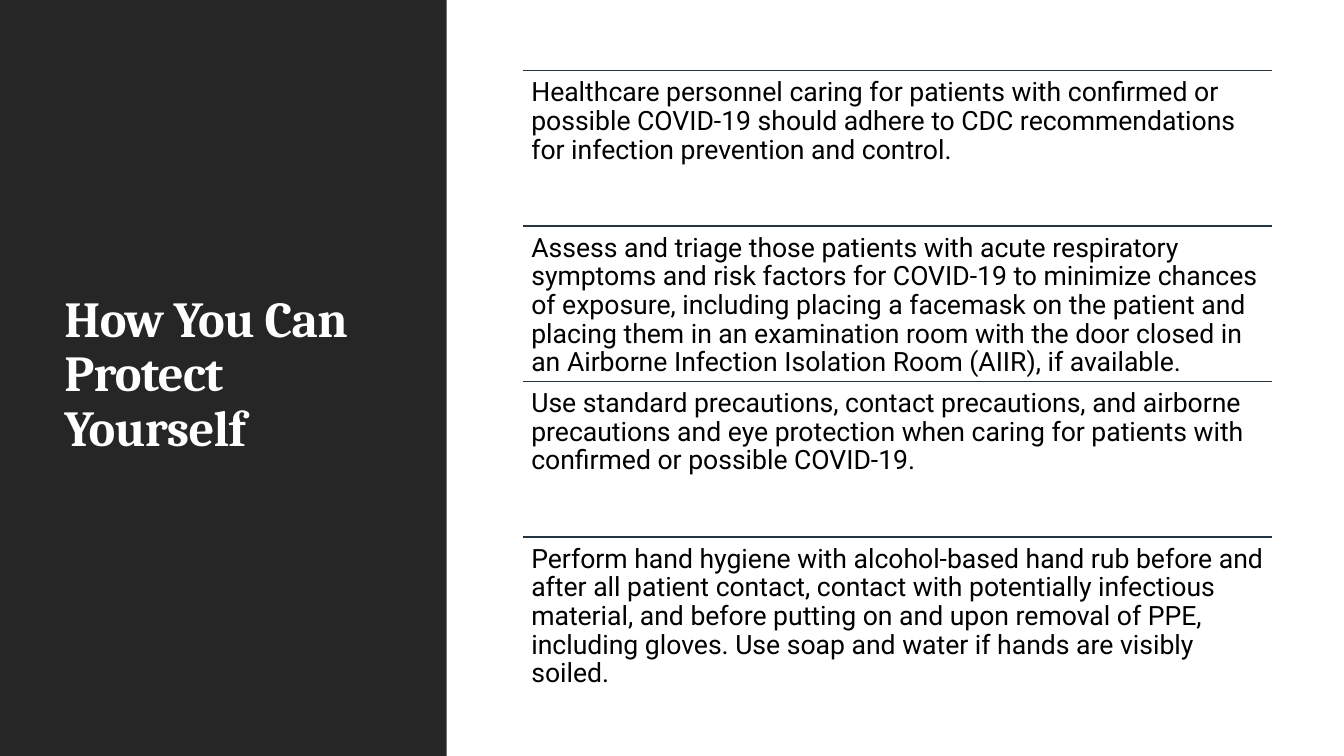
from dataclasses import dataclass

from lxml import etree
from pptx import Presentation
from pptx.dml.color import RGBColor
from pptx.enum.shapes import MSO_CONNECTOR, MSO_SHAPE
from pptx.enum.text import MSO_ANCHOR
from pptx.oxml.ns import qn
from pptx.util import Inches, Pt

STRAIGHT = MSO_CONNECTOR.STRAIGHT
RECTANGLE = MSO_SHAPE.RECTANGLE
TOP, MIDDLE = MSO_ANCHOR.TOP, MSO_ANCHOR.MIDDLE

TITLE = "How You Can Protect Yourself"
PRECAUTIONS = [
    "Healthcare personnel caring for patients with confirmed or possible COVID-19 "
    "should adhere to CDC recommendations for infection prevention and control.",
    "Assess and triage those patients with acute respiratory symptoms and risk factors "
    "for COVID-19 to minimize chances of exposure, including placing a facemask on the "
    "patient and placing them in an examination room with the door closed in an "
    "Airborne Infection Isolation Room (AIIR), if available.",
    "Use standard precautions, contact precautions, and airborne precautions and eye "
    "protection when caring for patients with confirmed or possible COVID-19.",
    "Perform hand hygiene with alcohol-based hand rub before and after all patient "
    "contact, contact with potentially infectious material, and before putting on and "
    "upon removal of PPE, including gloves. Use soap and water if hands are visibly soiled.",
]


@dataclass(frozen=True)
class Theme:
    panel: RGBColor = RGBColor(0x26, 0x26, 0x26)
    rule: RGBColor = RGBColor(0x24, 0x35, 0x41)
    title: RGBColor = RGBColor(0xFF, 0xFF, 0xFF)
    body: RGBColor = RGBColor(0, 0, 0)
    title_font: str = "Cambria"
    body_font: str = "Roboto"
    title_size: float = 36
    body_size: float = 19
    rule_width: float = 1.25


THEME = Theme()
SLIDE_WIDTH, SLIDE_HEIGHT = 13.33, 7.5
PANEL_WIDTH = 4.43
TITLE_BOX = (0.54, 0.57, 3.37, 6.31)
LIST_LEFT, LIST_TOP, LIST_WIDTH, LIST_HEIGHT = 5.19, 0.7, 7.43, 6.17


def add_text(slide, text, box, *, font, size, color, bold=False, anchor=TOP,
             inset_x=0.08, inset_y=0.08, tracking=0):
    """Add a wrapped text box; tracking is in points."""
    frame = slide.shapes.add_textbox(*map(Inches, box)).text_frame
    frame.word_wrap = True
    frame.vertical_anchor = anchor
    frame.margin_left = frame.margin_right = Inches(inset_x)
    frame.margin_top = frame.margin_bottom = Inches(inset_y)
    paragraph = frame.paragraphs[0]
    paragraph.line_spacing = 0.9
    run = paragraph.add_run()
    run.text = text
    run.font.name = font
    run.font.size = Pt(size)
    run.font.bold = bold
    run.font.color.rgb = color
    if tracking:
        run.font._element.set("spc", str(int(tracking * 100)))


def add_rule(slide, left, top, width):
    rule = slide.shapes.add_connector(
        STRAIGHT, Inches(left), Inches(top), Inches(left + width), Inches(top))
    rule.line.color.rgb = THEME.rule
    rule.line.width = Pt(THEME.rule_width)
    etree.SubElement(rule._element.spPr, qn("a:effectLst"))


def add_panel(slide):
    panel = slide.shapes.add_shape(
        RECTANGLE, 0, 0, Inches(PANEL_WIDTH), Inches(SLIDE_HEIGHT))
    panel.shadow.inherit = False
    panel.fill.solid()
    panel.fill.fore_color.rgb = THEME.panel
    panel.line.fill.background()


def main():
    deck = Presentation()
    deck.slide_width, deck.slide_height = Inches(SLIDE_WIDTH), Inches(SLIDE_HEIGHT)
    slide = deck.slides.add_slide(deck.slide_layouts[6])

    add_panel(slide)
    add_text(slide, TITLE, TITLE_BOX, font=THEME.title_font, size=THEME.title_size,
             color=THEME.title, bold=True, anchor=MIDDLE,
             inset_x=0.1, inset_y=0.05, tracking=-0.5)

    row_height = LIST_HEIGHT / len(PRECAUTIONS)
    for row, precaution in enumerate(PRECAUTIONS):
        top = LIST_TOP + row * row_height
        add_rule(slide, LIST_LEFT, top, LIST_WIDTH)
        add_text(slide, precaution, (LIST_LEFT, top, LIST_WIDTH, row_height),
                 font=THEME.body_font, size=THEME.body_size, color=THEME.body)

    deck.save("out.pptx")


if __name__ == "__main__":
    main()
